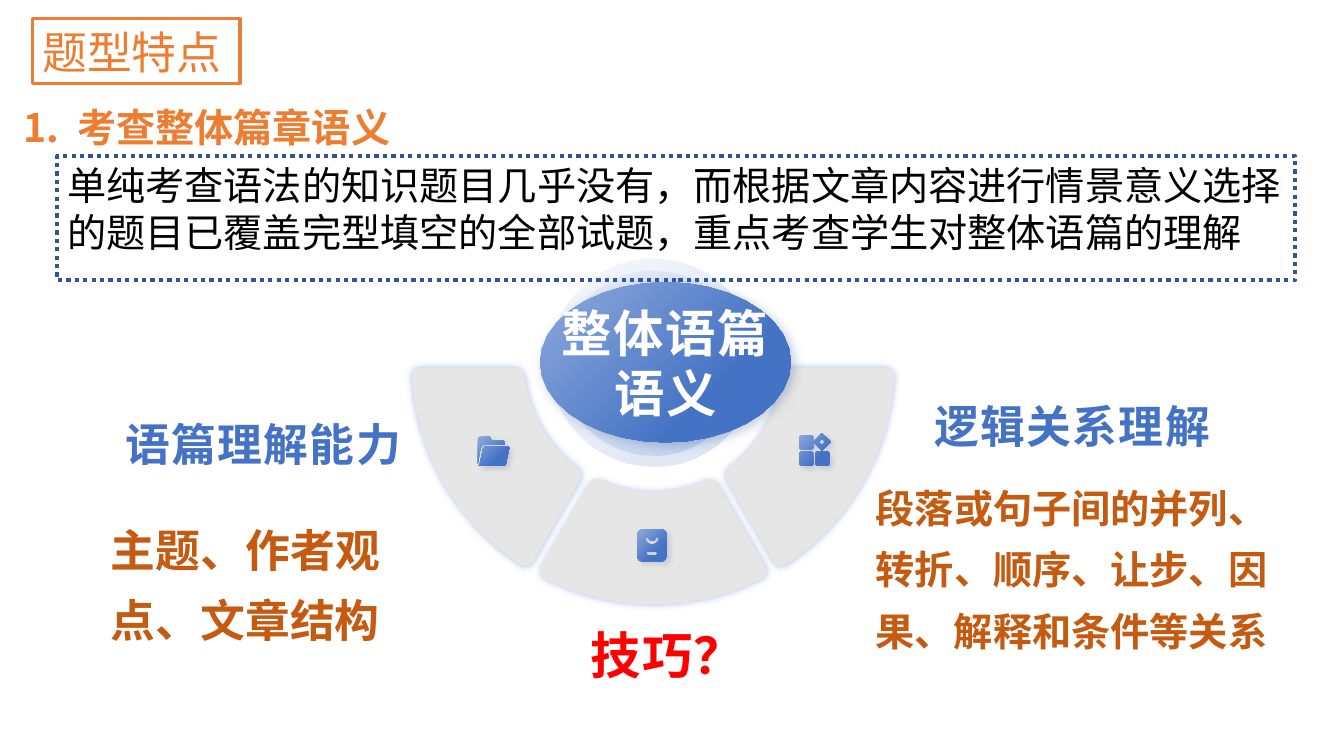
"""Build the slide on how cloze questions test the meaning of a whole passage."""
import math
from lxml import etree
from pptx import Presentation
from pptx import util as u
from pptx.dml.color import RGBColor
from pptx.enum import dml, shapes, text
from pptx.oxml.ns import qn

ink = RGBColor.from_string
SANS, NOTO = "Arial", "Noto Sans CJK SC"
BLUE, ORANGE, BROWN = "4472C4", "ED7D31", "C55A11"
LEFT, CENTER, RIGHT = text.PP_ALIGN.LEFT, text.PP_ALIGN.CENTER, text.PP_ALIGN.RIGHT
TOP, MIDDLE = text.MSO_ANCHOR.TOP, text.MSO_ANCHOR.MIDDLE


def paint(shape, stops, shadow=None):
    """Fill a shape with (position, colour, opacity) stops and an optional glow or shadow."""
    if len(stops) == 1:
        shape.fill.solid()
        shape.fill.fore_color.rgb = ink(stops[0][1])
    else:
        shape.fill.gradient()
        shape.fill.gradient_angle = 315
        for stop, (position, color, opacity) in zip(shape.fill.gradient_stops, stops):
            stop.position = position
            stop.color.rgb = ink(color)
        for tint, (position, color, opacity) in zip(shape._element.spPr.iter(qn("a:srgbClr")), stops):
            etree.SubElement(tint, qn("a:alpha"), val=str(opacity * 1000))
    shape.line.fill.background()
    shape.shadow.inherit = False
    if shadow:
        color, opacity, blur, distance, angle = shadow
        effects = shape._element.spPr.find(qn("a:effectLst"))
        cast = etree.SubElement(effects, qn("a:outerShdw"), blurRad=str(u.Pt(blur)),
                                dist=str(u.Pt(distance)), dir=str(angle * 60000), rotWithShape="0")
        tint = etree.SubElement(cast, qn("a:srgbClr"), val=color)
        etree.SubElement(tint, qn("a:alpha"), val=str(opacity * 1000))


def write(box, runs, size, font, color, bold=False, align=LEFT, anchor=TOP, leading=None):
    """Write (text, letter spacing) runs as one paragraph."""
    frame = box.text_frame
    frame.word_wrap = True
    frame.auto_size = text.MSO_AUTO_SIZE.NONE
    frame.vertical_anchor = anchor
    para = frame.paragraphs[0]
    para.alignment = align
    if leading:
        para.line_spacing = leading
    for words, spacing in runs:
        span = para.add_run()
        span.text = words
        span.font.size = u.Pt(size)
        span.font.bold = bold
        span.font.color.rgb = ink(color)
        span.font.name = font
        etree.SubElement(span._r.rPr, qn("a:ea"), typeface=font)
        if spacing:
            span._r.rPr.set("spc", str(spacing * 100))


deck = Presentation()
deck.slide_width, deck.slide_height = u.Pt(960), u.Pt(540)
page = deck.slides.add_slide(deck.slide_layouts[5])

title = page.shapes.title
title.left, title.top, title.width, title.height = u.Pt(23), u.Pt(13.5), u.Pt(148.5), u.Pt(46)
title.line.color.rgb = ink(ORANGE)
title.line.width = u.Pt(2.25)
write(title, [("题型特点", 0)], 32, SANS, ORANGE, anchor=MIDDLE)

summary = page.shapes.add_shape(shapes.MSO_SHAPE.RECTANGLE, u.Pt(41), u.Pt(111.6), u.Pt(884.2), u.Pt(88.6))
summary.fill.background()
summary.shadow.inherit = False
summary.line.color.rgb = ink("325491")
summary.line.width = u.Pt(3)
summary.line.dash_style = dml.MSO_LINE.ROUND_DOT
write(summary, [("单纯考查语法的知识题目几乎没有，而根据文章内容进行情景意义选择的题目已覆盖完型填空的全部试题，"
                 "重点考查学生对整体语篇的理解", 0)], 28, NOTO, "000000")

HUB_X, HUB_Y = 466.6, 259.2
for radius in (74.2, 66.2):
    halo = page.shapes.add_shape(shapes.MSO_SHAPE.OVAL, u.Pt(HUB_X - radius), u.Pt(HUB_Y - radius),
                                 u.Pt(2 * radius), u.Pt(2 * radius))
    paint(halo, [(0, BLUE, 5), (1, BLUE, 20)])

GREY = [(0, "E7E6E6", 100)]
SHADE = [(0, "8FAADC", 100), (0.7, BLUE, 100)]
GLOW = ("8FAADC", 70, 5, 0, 0)
ICON_SHADOW = ("2F5597", 20, 4, 3, 45)
outlines = []

INNER, OUTER, GAP, ROUND = 92, 172.8, 3.4, 7
low, high = INNER + ROUND, OUTER - ROUND
corners = [(low, -1, -90, 0), (high, -1, 0, 90), (high, 1, 90, 0), (low, 1, 0, -90)]
for middle in (30, 90, 150):
    polar = []
    for ring, side, begin, end in corners:
        for step in range(4):
            turn = math.radians(begin + (end - begin) * step / 3)
            radius = ring + ROUND * math.sin(turn)
            inset = GAP + ROUND * (1 - math.cos(turn))
            angle = math.radians(middle + side * 30) - side * math.asin(inset / radius)
            polar.append((radius, angle))
    sector = []
    for (r0, a0), (r1, a1) in zip(polar, polar[1:] + polar[:1]):
        pieces = 8 if abs(a1 - a0) > 0.4 else 1
        for step in range(pieces):
            radius, angle = r0 + (r1 - r0) * step / pieces, a0 + (a1 - a0) * step / pieces
            sector.append((HUB_X + radius * math.cos(angle), HUB_Y + radius * math.sin(angle)))
    outlines.append(([sector], GREY, GLOW))

circle = [(math.cos(math.radians(a)), math.sin(math.radians(a))) for a in range(0, 360, 10)]
core = [(475.4 + 89.6 * x, 258.8 + 57.2 * y) for x, y in circle]
outlines.append(([core], SHADE, ("2F5597", 30, 8, 3, 45)))

folder = [
    [(341.3, 313), (342.3, 311.8), (349.9, 311.8), (351.4, 314.6), (359.5, 314.6), (360.7, 315.8),
     (360.7, 317.5), (346.3, 317.5), (344.2, 318.2), (343.2, 321), (341.3, 331.2)],
    [(345.2, 319.6), (346.5, 319), (362.9, 319), (363.8, 320), (361.4, 331.6), (360.2, 332.7),
     (342, 332.7), (342.8, 331)],
]
smile = [(465.8 + r * x, 383.8 + r * y) for r, arc in ((5.2, circle[:19:3]), (2.6, circle[18::-3])) for x, y in arc]
bag = [smile]
grid = [[(587.2 + dx * r, 315.7 + dy * r) for dx, dy in ((0, -1), (1, 0), (0, 1), (-1, 0))] for r in (6.4, 2.2)]
tiles = [(bag, 455, 378, 21.2, 23, 4), (bag, 461.5, 393.8, 8, 2.9, 1.4)]
tiles += [(grid, x, y, 10, 10, 1.6) for x, y in ((571, 311), (571, 322.6), (582.5, 322.6))]
for icon, left, top, width, height, r in tiles:
    icon.append([(left + width / 2 + math.copysign(width / 2 - r, x) + r * x,
                  top + height / 2 + math.copysign(height / 2 - r, y) + r * y) for x, y in circle[1::3]])
outlines += [(icon, SHADE, ICON_SHADOW) for icon in (folder, bag, grid)]

for contours, stops, shadow in outlines:
    builder = None
    for contour in contours:
        points = [(u.Pt(x), u.Pt(y)) for x, y in contour]
        if builder is None:
            builder = page.shapes.build_freeform(*points[0])
        else:
            builder.move_to(*points[0])
        builder.add_line_segments(points[1:], close=True)
    shape = builder.convert_to_shape()
    paint(shape, stops, shadow)
    if contours[0] is core:
        write(shape, [("整体语篇语义", 1)], 36, SANS, "FFFFFF", True, CENTER, MIDDLE)

labels = [
    (10, 70.6, 320, 41, [("1.", 0), (" ", 6), ("考查整体篇章语义", 0)], 28, NOTO, ORANGE, LEFT, None),
    (41, 293.8, 252.7, 26.6, [("语篇理解能力", 1)], 32, NOTO, BLUE, RIGHT, None),
    (41, 358.6, 237.6, 57.6, [("主题、作者观点、文章结构", 0)], 32, SANS, BROWN, RIGHT, 1.3),
    (639.4, 281.5, 252.7, 26.6, [("逻辑关系理解", 1)], 32, NOTO, BLUE, CENTER, None),
    (616.3, 332.6, 298.1, 57.6, [("段落或句子间的并列、转折、顺序、让步、因果、解释和条件等关系", 0)],
     28, SANS, BROWN, CENTER, 1.3),
    (414.7, 442, 130, 26.6, [("技巧？", 1)], 36, NOTO, "FF0000", LEFT, None),
]
for left, top, width, height, runs, size, font, color, align, leading in labels:
    box = page.shapes.add_textbox(u.Pt(left), u.Pt(top), u.Pt(width), u.Pt(height))
    write(box, runs, size, font, color, True, align, leading=leading)

deck.save("out.pptx")
